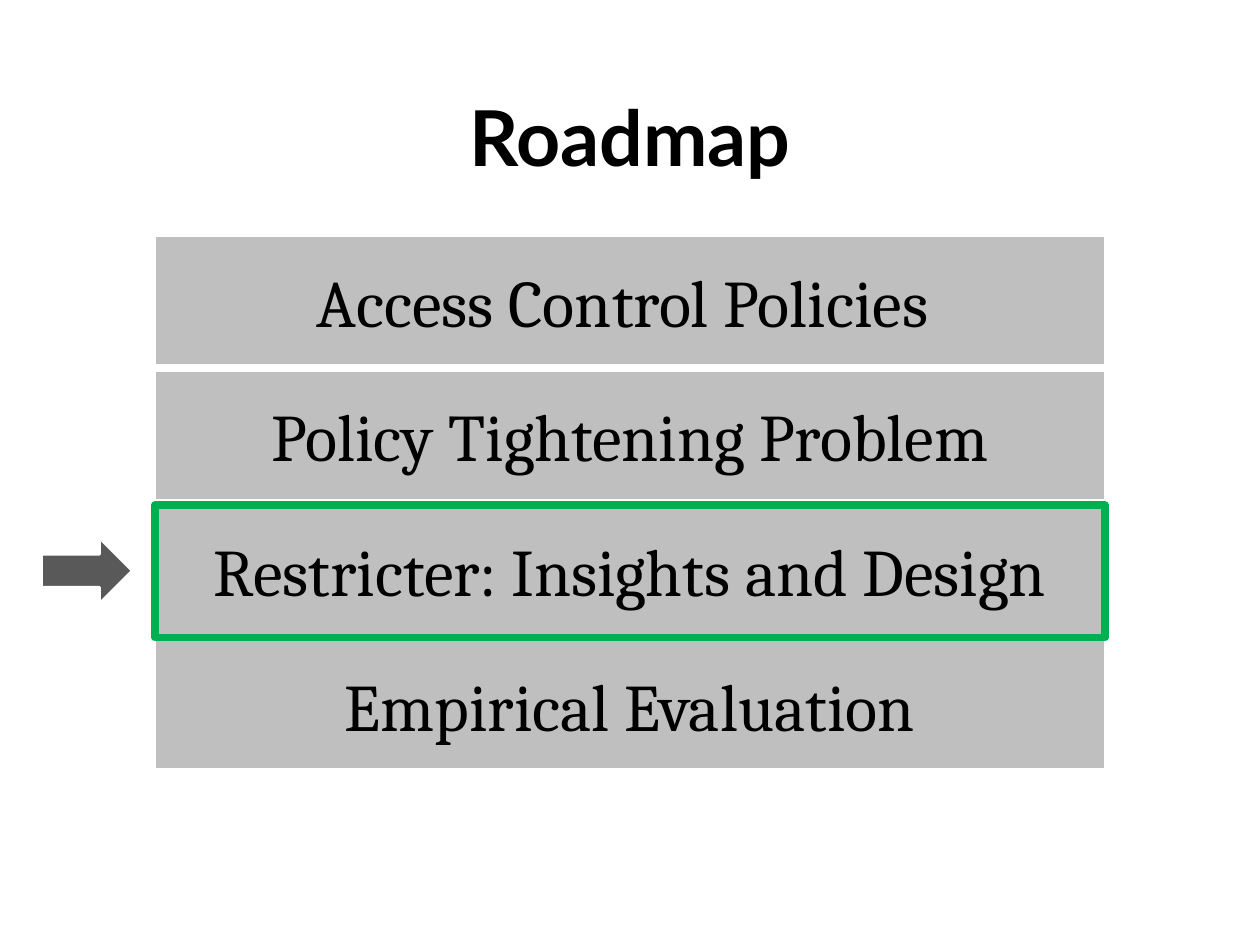
"""Build the roadmap slide with the current topic highlighted."""
from dataclasses import dataclass
from typing import Optional

import pptx
import pptx.dml.color
import pptx.enum.shapes
import pptx.enum.text
import pptx.util

Inches = pptx.util.Inches
Shape = pptx.enum.shapes.MSO_SHAPE


@dataclass(frozen=True)
class Theme:
    bar: str = "BFBFBF"
    edge: str = "FFFFFF"
    arrow: str = "595959"
    highlight: str = "00B050"
    text: str = "000000"
    title_font: str = "Lato"
    topic_font: str = "Cambria"
    title_size: float = 44
    topic_size: float = 38
    edge_width: float = 1.5
    highlight_width: float = 4.5


@dataclass(frozen=True)
class Area:
    left: float
    top: float
    width: float
    height: float

    def lengths(self) -> list:
        return [Inches(value) for value in (self.left, self.top, self.width, self.height)]


THEME = Theme()
TOPICS = (
    "Access Control Policies ",
    "Policy Tightening Problem",
    "Restricter: Insights and Design",
    "Empirical Evaluation",
)
CURRENT = 2
FIRST_BAR = Area(1.23, 1.87, 7.54, 1.03)
BAR_PITCH = 1.07


def color(code: str) -> pptx.dml.color.RGBColor:
    return pptx.dml.color.RGBColor.from_string(code)


def bar_area(index: int) -> Area:
    top = FIRST_BAR.top + index * BAR_PITCH
    return Area(FIRST_BAR.left, top, FIRST_BAR.width, FIRST_BAR.height)


def write(box, text: str, font: str, size: float, bold: bool = False):
    frame = box.text_frame
    frame.word_wrap = True
    frame.vertical_anchor = pptx.enum.text.MSO_ANCHOR.MIDDLE
    para = frame.paragraphs[0]
    para.alignment = pptx.enum.text.PP_ALIGN.CENTER
    span = para.add_run()
    span.text = text
    span.font.name = font
    span.font.size = pptx.util.Pt(size)
    span.font.bold = bold
    span.font.color.rgb = color(THEME.text)
    return para


def add_block(page, kind: Shape, area: Area, fill: Optional[str], line: str, width: float):
    block = page.shapes.add_shape(kind, *area.lengths())
    block.shadow.inherit = False
    if fill is None:
        block.fill.background()
    else:
        block.fill.solid()
        block.fill.fore_color.rgb = color(fill)
    block.line.color.rgb = color(line)
    block.line.width = pptx.util.Pt(width)
    return block


def main() -> None:
    deck = pptx.Presentation()
    deck.slide_width, deck.slide_height = Inches(10), Inches(7.5)
    page = deck.slides.add_slide(deck.slide_layouts[6])

    title = page.shapes.add_textbox(*Area(0.69, 0.4, 8.62, 1.45).lengths())
    heading = write(title, "Roadmap", THEME.title_font, THEME.title_size, bold=True)
    heading.line_spacing = 0.9

    for index, topic in enumerate(TOPICS):
        bar = add_block(page, Shape.RECTANGLE, bar_area(index), THEME.bar, THEME.edge, THEME.edge_width)
        write(bar, topic, THEME.topic_font, THEME.topic_size)

    arrow = Area(0.33, 4.27, 0.72, 0.52)
    add_block(page, Shape.RIGHT_ARROW, arrow, THEME.arrow, THEME.edge, THEME.edge_width)

    current = bar_area(CURRENT)
    outline = Area(current.left, current.top, current.width, 1.05)
    add_block(page, Shape.RECTANGLE, outline, None, THEME.highlight, THEME.highlight_width)

    deck.save("out.pptx")


if __name__ == "__main__":
    main()
